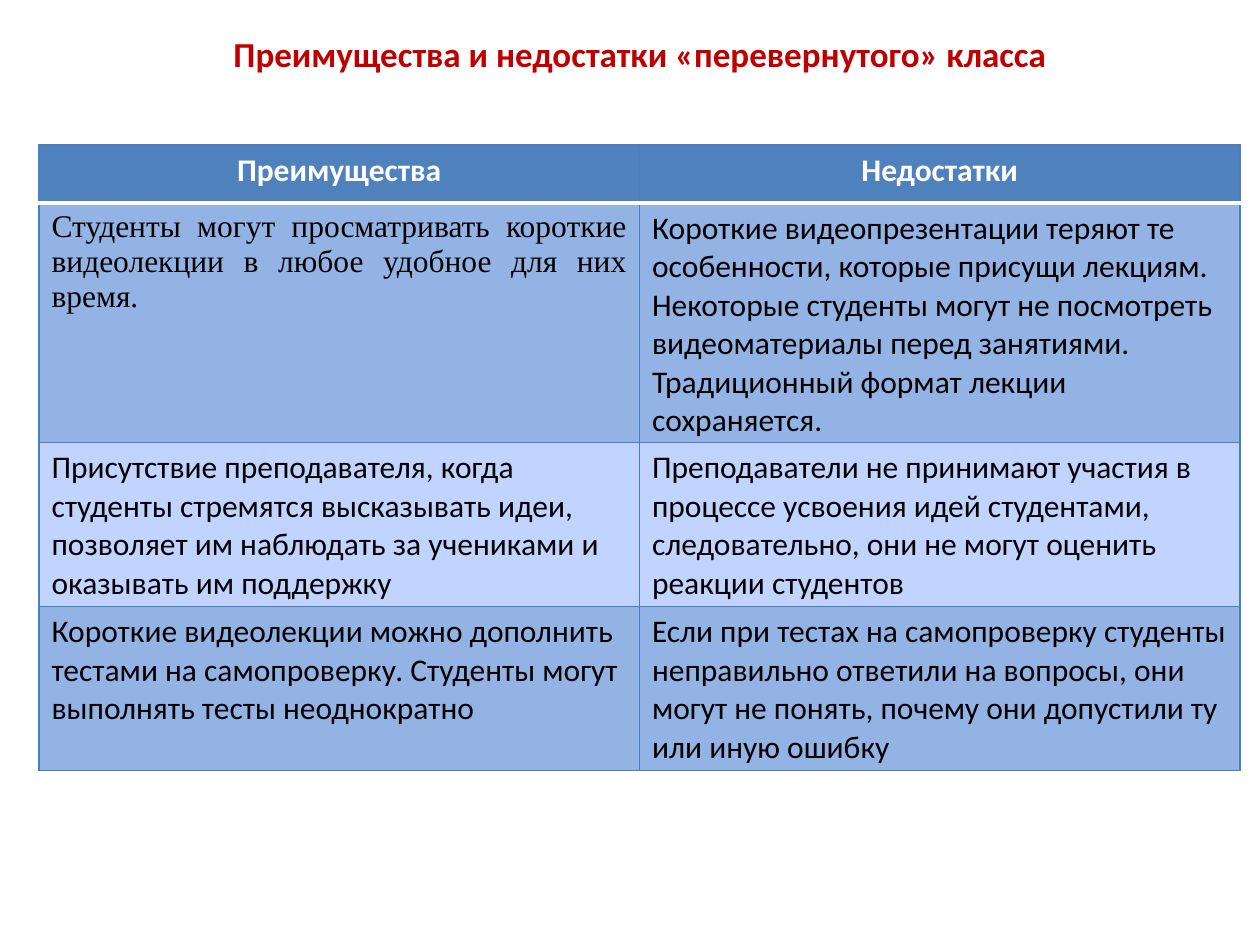
from lxml.etree import SubElement as Sub
from pptx import Presentation
from pptx.dml.color import RGBColor
from pptx.enum.text import MSO_ANCHOR as Anchor, MSO_AUTO_SIZE as Fit, PP_ALIGN as Align
from pptx.oxml.ns import qn
from pptx.util import Emu, Pt

RED = RGBColor(0xC0, 0x00, 0x00)
WHITE = RGBColor(0xFF, 0xFF, 0xFF)
BLACK = RGBColor(0x00, 0x00, 0x00)
BLUE = RGBColor(0x4F, 0x81, 0xBD)
EDGE = RGBColor(0x4B, 0x7E, 0xBC)
DARK = RGBColor(0x93, 0xB3, 0xE4)
PALE = RGBColor(0xC0, 0xD4, 0xFF)

TITLE = "Преимущества и недостатки «перевернутого» класса"
ROWS = [
    ("Преимущества", "Недостатки"),
    ("Студенты могут просматривать короткие видеолекции в любое удобное для них время.",
     "Короткие видеопрезентации теряют те особенности, которые присущи лекциям. "
     "Некоторые студенты могут не посмотреть видеоматериалы перед занятиями. "
     "Традиционный формат лекции сохраняется."),
    ("Присутствие преподавателя, когда студенты стремятся высказывать идеи, "
     "позволяет им наблюдать за учениками и оказывать им поддержку",
     "Преподаватели не принимают участия в процессе усвоения идей студентами, "
     "следовательно, они не могут оценить реакции студентов"),
    ("Короткие видеолекции можно дополнить тестами на самопроверку. "
     "Студенты могут выполнять тесты неоднократно",
     "Если при тестах на самопроверку студенты неправильно ответили на вопросы, "
     "они могут не понять, почему они допустили ту или иную ошибку"),
]
HIGH = [58, 239, 164, 164]
FILLS = [BLUE, DARK, PALE, DARK]


def px(num):
    """Turn pixels into EMU."""
    return Emu(round(num * 914400 / 126))


class Deck:
    """Hold the style and the current slide."""

    def __init__(self):
        self.prs = Presentation()
        self.prs.slide_width, self.prs.slide_height = px(1260), px(945)
        self.slide = self.prs.slides.add_slide(self.prs.slide_layouts[5])
        self.base = {"name": "Calibri", "size": Pt(18), "bold": False}

    def label(self, frame, text, color, align, **style):
        """Put one formatted paragraph into a text frame."""
        para = frame.paragraphs[0]
        para.alignment = align
        run = para.add_run()
        run.text = text
        for key, val in {**self.base, **style}.items():
            setattr(run.font, key, val)
        run.font.color.rgb = color

    def title(self, text, *box):
        """Place and format the title."""
        shape = self.slide.shapes.title
        for key, val in zip(("left", "top", "width", "height"), box):
            setattr(shape, key, px(val))
        frame = shape.text_frame
        for key, val in {"word_wrap": True, "auto_size": Fit.SHAPE_TO_FIT_TEXT,
                         "vertical_anchor": Anchor.TOP}.items():
            setattr(frame, key, val)
        self.label(frame, text, RED, Align.CENTER, size=Pt(20), bold=True)

    def edge(self, cell, side, color, width):
        """Draw one border of a cell."""
        line = Sub(cell._tc.get_or_add_tcPr(), qn("a:ln" + side), w=str(Pt(width)))
        Sub(Sub(line, qn("a:solidFill")), qn("a:srgbClr"), val=str(color))

    def cell(self, cell, text, row, col):
        """Fill, frame and label one cell."""
        for side in "LRTB":
            rule = (row, side) in ((0, "B"), (1, "T"))
            self.edge(cell, side, *((WHITE, 2) if rule else (EDGE, 0.75)))
        cell.fill.solid()
        cell.fill.fore_color.rgb = FILLS[row]
        if row == 0:
            look = {"color": WHITE, "align": Align.CENTER, "bold": True}
        elif (row, col) == (1, 0):
            look = {"color": BLACK, "align": Align.JUSTIFY, "name": "Times New Roman"}
        else:
            look = {"color": BLACK, "align": Align.LEFT}
        self.label(cell.text_frame, text, **look)

    def table(self, rows, left, top, width):
        """Add the table with equal columns."""
        cols = len(rows[0])
        grid = self.slide.shapes.add_table(
            len(rows), cols, px(left), px(top), px(width), px(sum(HIGH))).table
        for row, texts in enumerate(rows):
            grid.rows[row].height = px(HIGH[row])
            for col, text in enumerate(texts):
                self.cell(grid.cell(row, col), text, row, col)


def main():
    """Build and save the slide."""
    deck = Deck()
    deck.title(TITLE, 184, 26, 912, 55)
    deck.table(ROWS, 39, 145, 1201)
    deck.prs.save("out.pptx")


if __name__ == "__main__":
    main()
